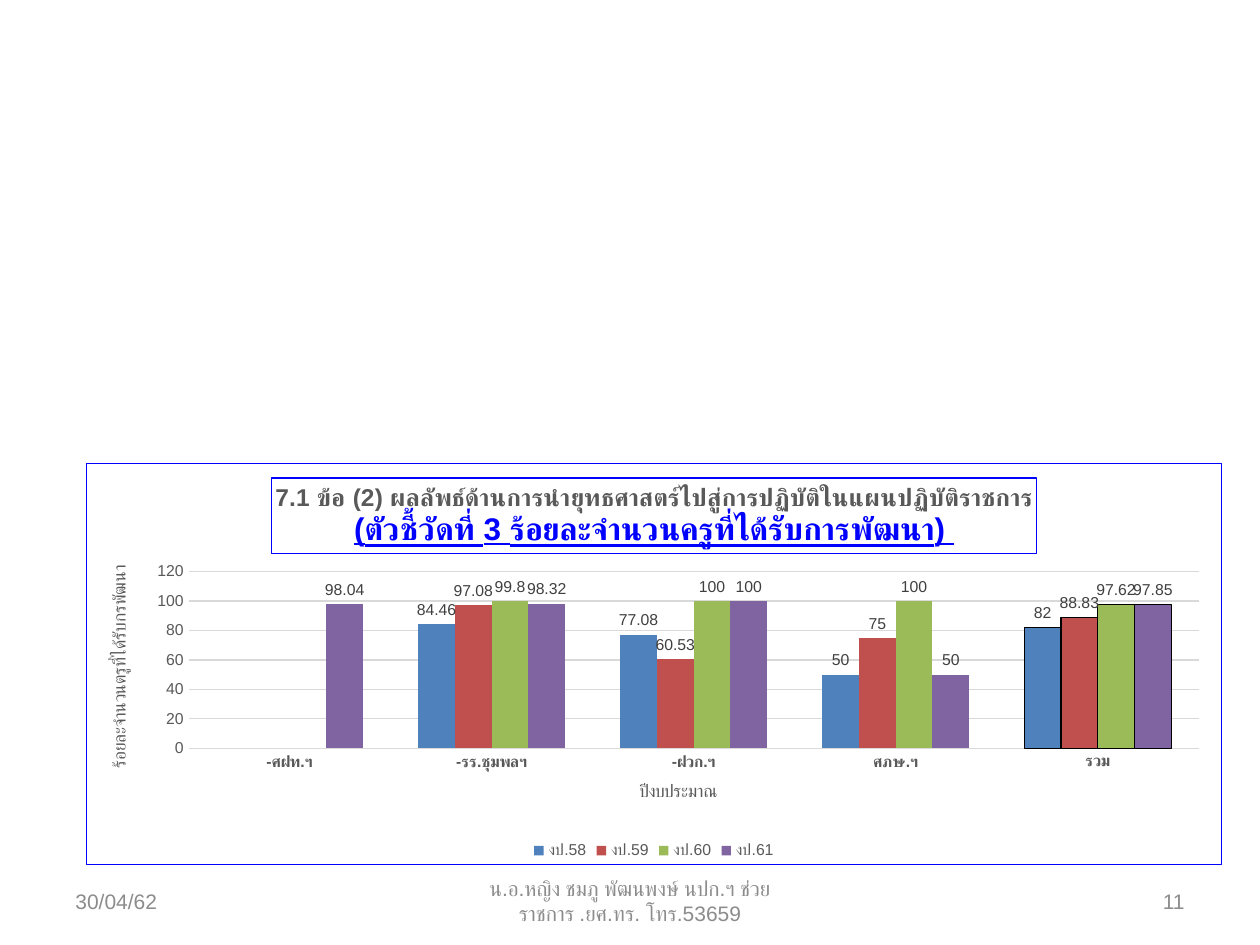
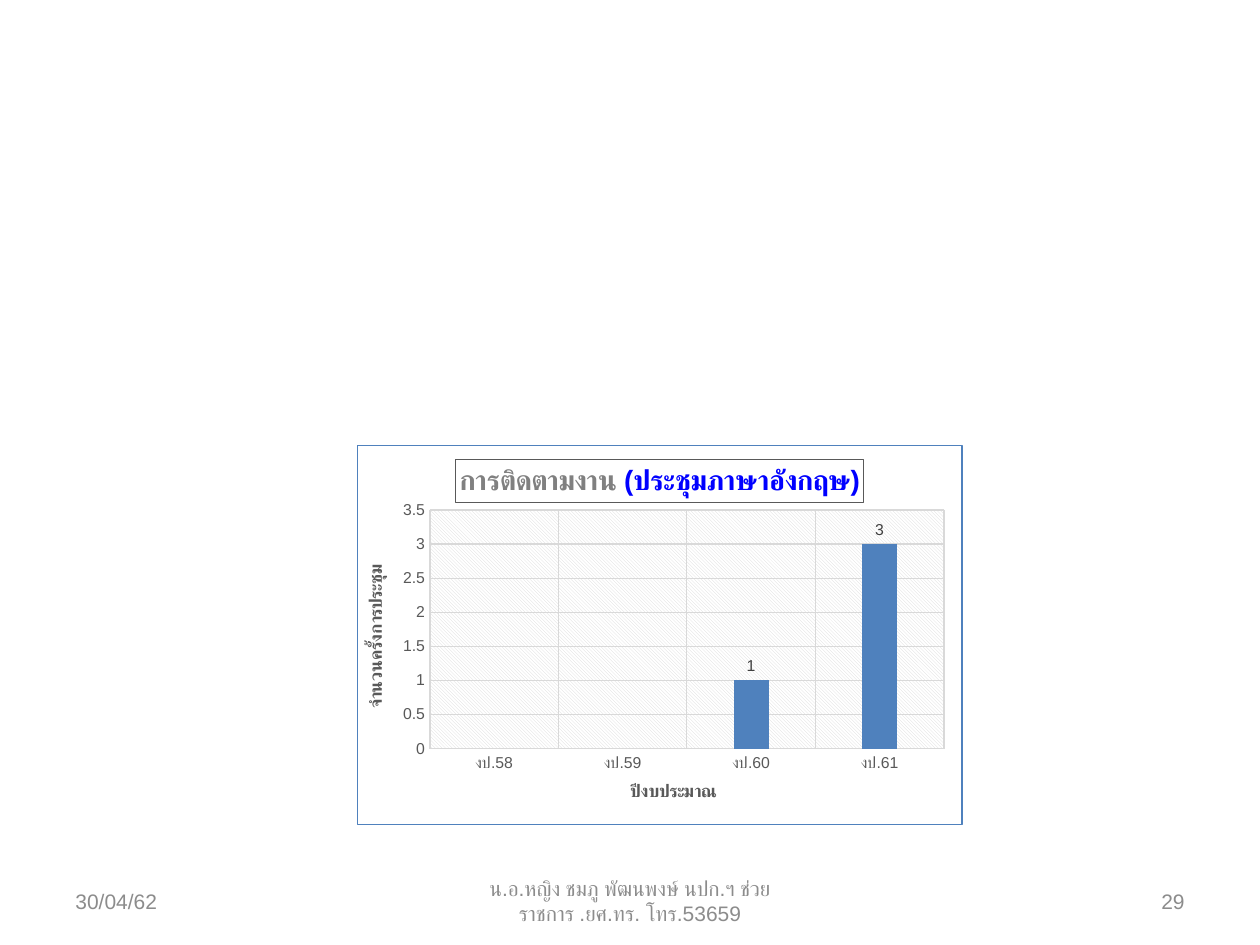
from lxml import etree
from pptx import Presentation
from pptx import util as u
from pptx.chart.data import CategoryChartData
from pptx.dml.color import RGBColor
from pptx.enum import chart as charts, text
from pptx.oxml.ns import nsdecls, qn

Pt = u.Pt
FONT = "Arial"
BLACK = RGBColor(0x00, 0x00, 0x00)
BRIGHT_BLUE = RGBColor(0x00, 0x00, 0xFF)
FOOTER_GREY = RGBColor(0x8C, 0x8C, 0x8C)
TITLE_GREY = RGBColor(0x80, 0x80, 0x80)
TEXT_GREY = RGBColor(0x59, 0x59, 0x59)
LABEL_GREY = RGBColor(0x40, 0x40, 0x40)
GRID_GREY = RGBColor(0xD9, 0xD9, 0xD9)
BLUE = RGBColor(0x4F, 0x81, 0xBD)
RED = RGBColor(0xC0, 0x50, 0x4D)
GREEN = RGBColor(0x9B, 0xBB, 0x59)
PURPLE = RGBColor(0x80, 0x64, 0xA2)
SERIES_COLORS = [BLUE, RED, GREEN, PURPLE]

WHITE_FILL = '<a:solidFill><a:srgbClr val="FFFFFF"/></a:solidFill>'
HATCH_FILL = ('<a:pattFill prst="ltDnDiag"><a:fgClr><a:srgbClr val="D9D9D9"/></a:fgClr>'
              '<a:bgClr><a:srgbClr val="FFFFFF"/></a:bgClr></a:pattFill>')

# left, width, alignment; None stands for the slide number
FOOTERS = [
    (36, 168, text.PP_ALIGN.LEFT, "30/04/62"),
    (246, 228, text.PP_ALIGN.CENTER,
     "น.อ.หญิง ชมภู พัฒนพงษ์ นปก.ฯ ช่วยราชการ .ยศ.ทร. โทร.53659"),
    (516, 168, text.PP_ALIGN.RIGHT, None),
]
YEARS = ["งป.58", "งป.59", "งป.60", "งป.61"]

# Each title is a list of paragraphs, each a list of (text, size, colour, underline).
SLIDES = [
    dict(
        number=11, box=(49, 264.4, 649.4, 230.2), border=BRIGHT_BLUE,
        title=[
            [("7.1 ข้อ (2) ผลลัพธ์ด้านการนำยุทธศาสตร์ไปสู่การปฏิบัติในแผนปฏิบัติราชการ",
              14, TEXT_GREY, False)],
            [("(ตัวชี้วัดที่ 3 ร้อยละจำนวนครูที่ได้รับการพัฒนา) ", 18, BRIGHT_BLUE, True)],
        ],
        title_border=BRIGHT_BLUE,
        categories=["-ศฝท.ฯ", "-รร.ชุมพลฯ", "-ฝวก.ฯ", "ศภษ.ฯ", "รวม"],
        series=list(zip(YEARS, [
            [None, 84.46, 77.08, 50, 82],
            [None, 97.08, 60.53, 75, 88.83],
            [None, 99.8, 100, 100, 97.62],
            [98.04, 98.32, 100, 50, 97.85],
        ])),
        axis_titles=("ปีงบประมาณ", "ร้อยละจำนวนตรูที่ได้รับกรพัฒนา"),
        bold_axis_titles=False, bold_categories=True,
        gap=150, overlap=0, maximum=120, unit=20, legend=True,
        category_grid=False, total_point=4,
        plot_layout=(0.09, 0.27, 0.89, 0.44), plot_fill="<a:noFill/>",
    ),
    dict(
        number=29, box=(203.8, 254.2, 346.3, 217.4), border=BLUE,
        title=[[("การติดตามงาน ", 16, TITLE_GREY, False),
                ("(ประชุมภาษาอังกฤษ)", 16, BRIGHT_BLUE, False)]],
        title_border=TEXT_GREY,
        categories=YEARS,
        series=[("Series 1", [None, None, 1, 3])],
        axis_titles=("ปีงบประมาณ", "จำนวนครั้งการประชุม"),
        bold_axis_titles=True, bold_categories=False,
        gap=267, overlap=-43, maximum=3.5, unit=0.5, legend=False,
        category_grid=True, total_point=None,
        plot_layout=(0.12, 0.17, 0.85, 0.63), plot_fill=HATCH_FILL,
    ),
]


def set_font(font, size, color, **format_values):
    for name, value in dict(name=FONT, size=Pt(size), bold=False, **{}).items():
        setattr(font, name, value)
    for name, value in format_values.items():
        setattr(font, name, value)
    font.color.rgb = color


def shape_properties(fill, line=None):
    """Return a c:spPr element with the fill XML and an optional line colour."""
    line_fill = f'<a:solidFill><a:srgbClr val="{line}"/></a:solidFill>' if line else "<a:noFill/>"
    return etree.fromstring(f'<c:spPr {nsdecls("c", "a")}>{fill}'
                            f'<a:ln w="{Pt(0.75)}">{line_fill}</a:ln></c:spPr>')


presentation = Presentation()
presentation.slide_width, presentation.slide_height = Pt(720), Pt(540)

for content in SLIDES:
    slide = presentation.slides.add_slide(presentation.slide_layouts[6])

    for left, width, alignment, words in FOOTERS:
        frame = slide.shapes.add_textbox(Pt(left), Pt(500.5), Pt(width), Pt(28.75)).text_frame
        frame.word_wrap = True
        frame.vertical_anchor = text.MSO_ANCHOR.MIDDLE
        paragraph = frame.paragraphs[0]
        paragraph.alignment = alignment
        run = paragraph.add_run()
        run.text = words or str(content["number"])
        set_font(run.font, 12, FOOTER_GREY)

    chart_data = CategoryChartData()
    chart_data.categories = content["categories"]
    for name, values in content["series"]:
        chart_data.add_series(name, values)
    chart = slide.shapes.add_chart(charts.XL_CHART_TYPE.COLUMN_CLUSTERED,
                                   *map(Pt, content["box"]), chart_data).chart
    set_font(chart.font, 10, BLACK)

    # Title
    chart.has_title = True
    chart.chart_title.include_in_layout = False
    title_line = chart.chart_title.format.line
    title_line.color.rgb, title_line.width = content["title_border"], Pt(0.75)
    frame = chart.chart_title.text_frame
    for index, runs in enumerate(content["title"]):
        paragraph = frame.add_paragraph() if index else frame.paragraphs[0]
        for words, size, color, underline in runs:
            run = paragraph.add_run()
            run.text = words
            set_font(run.font, size, color, bold=True, underline=underline)

    # Columns and value labels
    plot = chart.plots[0]
    plot.gap_width, plot.overlap = content["gap"], content["overlap"]
    plot.vary_by_categories = False
    for series, color in zip(plot.series, SERIES_COLORS):
        series.format.fill.solid()
        series.format.fill.fore_color.rgb = color
        series.invert_if_negative = False
        if content["total_point"] is not None:
            total = series.points[content["total_point"]].format
            total.fill.solid()
            total.fill.fore_color.rgb = color
            total.line.color.rgb, total.line.width = BLACK, Pt(0.75)
        labels = series.data_labels
        labels.show_value = True
        labels.position = charts.XL_LABEL_POSITION.OUTSIDE_END
        set_font(labels.font, 9, LABEL_GREY)

    # Axes
    category_axis, value_axis = chart.category_axis, chart.value_axis
    value_axis.minimum_scale, value_axis.maximum_scale = 0, content["maximum"]
    value_axis.major_unit = content["unit"]
    category_axis.has_major_gridlines = content["category_grid"]
    value_axis.has_major_gridlines = True
    for axis, words in zip((category_axis, value_axis), content["axis_titles"]):
        axis.major_tick_mark = axis.minor_tick_mark = charts.XL_TICK_MARK.NONE
        axis.format.line.fill.background()
        if axis.has_major_gridlines:
            grid_line = axis.major_gridlines.format.line
            grid_line.color.rgb, grid_line.width = GRID_GREY, Pt(0.75)
        set_font(axis.tick_labels.font, 9, TEXT_GREY,
                 bold=axis is category_axis and content["bold_categories"])
        axis.has_title = True
        run = axis.axis_title.text_frame.paragraphs[0].add_run()
        run.text = words
        set_font(run.font, 10, TEXT_GREY, bold=content["bold_axis_titles"])
    if content["category_grid"]:
        category_axis.format.line.color.rgb = GRID_GREY
        category_axis.format.line.width = Pt(0.75)

    chart.has_legend = content["legend"]
    if content["legend"]:
        chart.legend.position = charts.XL_LEGEND_POSITION.BOTTOM
        chart.legend.include_in_layout = False
        set_font(chart.legend.font, 9, TEXT_GREY)

    # Chart border, plot fill and plot place
    chart_element = chart.element.find(qn("c:chart"))
    chart_element.addnext(shape_properties(WHITE_FILL, content["border"]))
    plot_area = chart_element.find(qn("c:plotArea"))
    plot_area.append(shape_properties(content["plot_fill"]))
    for layout in plot_area.findall(qn("c:layout")):
        plot_area.remove(layout)
    settings = [("layoutTarget", "inner"), ("xMode", "edge"), ("yMode", "edge"),
                *zip("xywh", content["plot_layout"])]
    rows = "".join(f'<c:{tag} val="{value}"/>' for tag, value in settings)
    plot_area.insert(0, etree.fromstring(
        f'<c:layout {nsdecls("c")}><c:manualLayout>{rows}</c:manualLayout></c:layout>'))

presentation.save("out.pptx")
